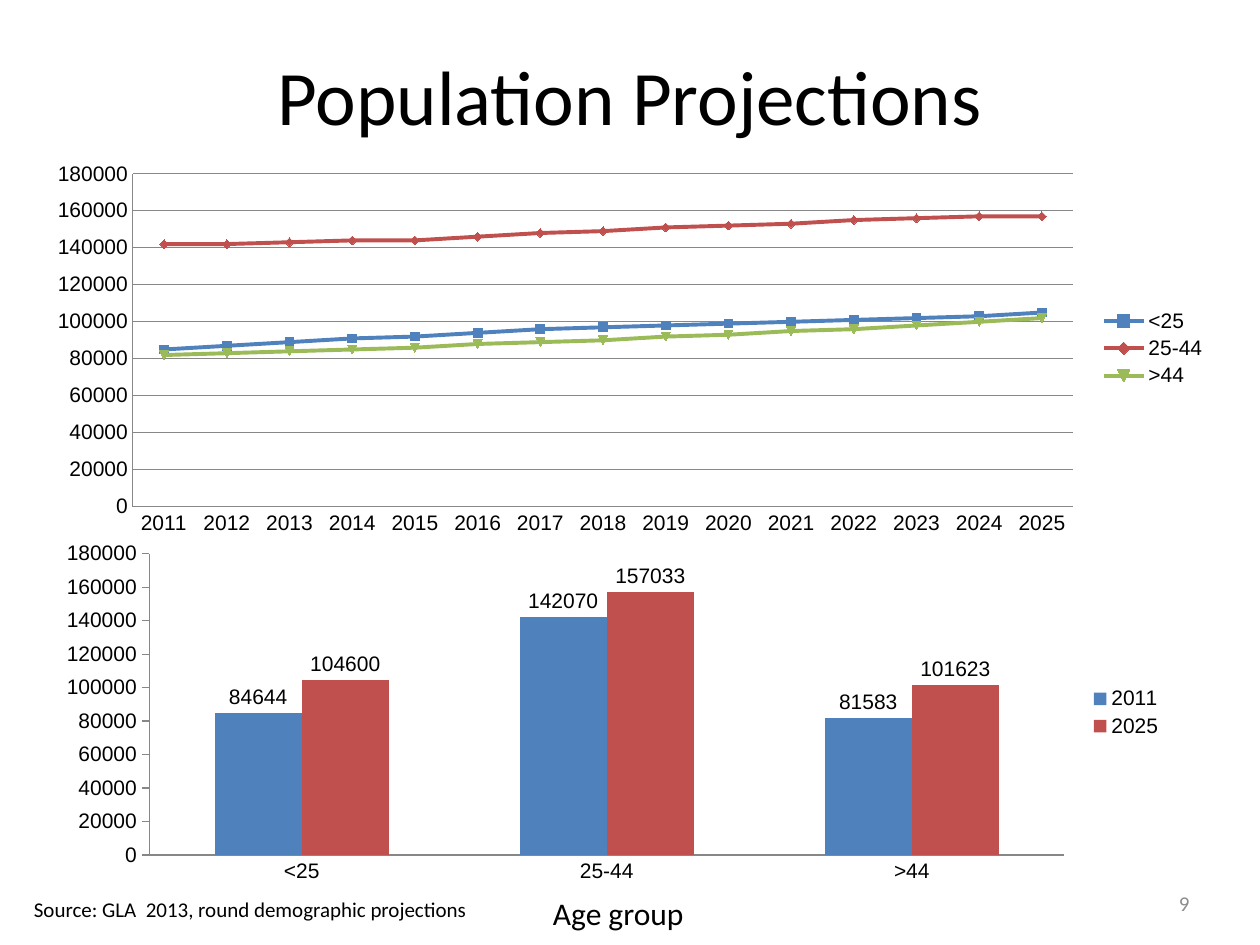
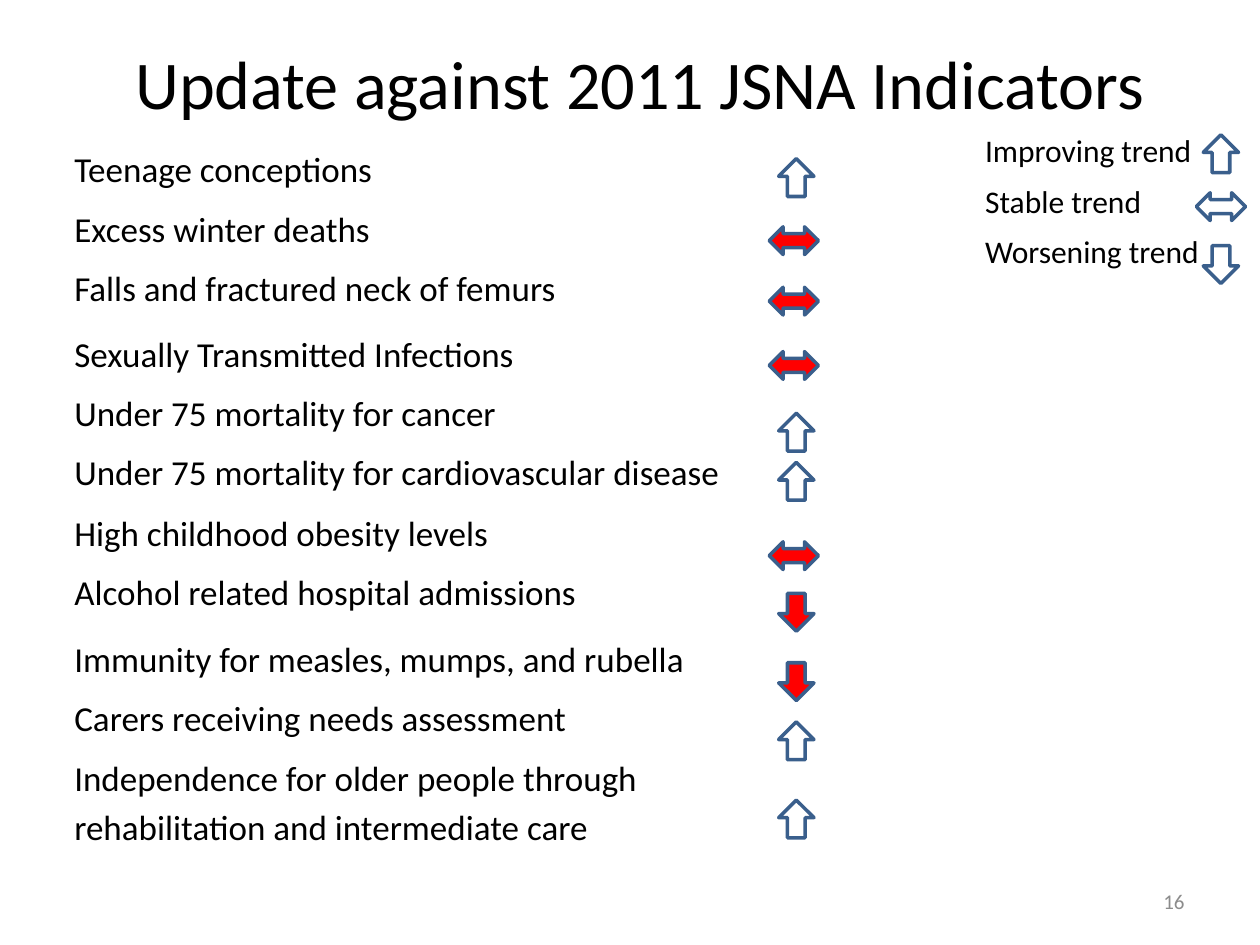
"""Build two slides: population charts and an indicator trend list."""
from typing import NamedTuple

from pptx import Presentation
from pptx.chart.data import CategoryChartData
from pptx.dml.color import RGBColor
from pptx.enum.chart import (XL_CHART_TYPE, XL_LABEL_POSITION, XL_LEGEND_POSITION,
                             XL_TICK_MARK)
from pptx.enum.shapes import MSO_SHAPE
from pptx.enum.text import MSO_ANCHOR, PP_ALIGN
from pptx.slide import Slide
from pptx.util import Inches, Pt

BLACK = RGBColor(0x00, 0x00, 0x00)
WHITE = RGBColor(0xFF, 0xFF, 0xFF)
GREY = RGBColor(0x8C, 0x8C, 0x8C)
AXIS = RGBColor(0x87, 0x87, 0x87)
BLUE = RGBColor(0x4F, 0x81, 0xBD)
BRICK = RGBColor(0xC0, 0x50, 0x4D)
GREEN = RGBColor(0x9B, 0xBB, 0x59)
RED = RGBColor(0xFF, 0x00, 0x00)
NAVY = RGBColor(0x3A, 0x5F, 0x8C)
SERIES = (BLUE, BRICK, GREEN)
FONT = "Calibri"
PLOT_FONT = "Arial"


class Box(NamedTuple):
    """Place and size in inches."""
    left: float
    top: float
    width: float
    height: float

    def lengths(self) -> tuple:
        """Return the four sides as lengths."""
        return tuple(Inches(side) for side in self)


class Label(NamedTuple):
    """A text box with one style."""
    box: Box
    lines: tuple
    size: float
    color: RGBColor = BLACK
    align: PP_ALIGN = PP_ALIGN.LEFT
    anchor: MSO_ANCHOR = MSO_ANCHOR.TOP
    wrap: bool = True
    gap: float = 0


class Graph(NamedTuple):
    """A chart with its data and axis style."""
    kind: XL_CHART_TYPE
    box: Box
    cats: tuple
    rows: dict
    tick: XL_TICK_MARK
    grid: bool


class Trend(NamedTuple):
    """An arrow form with its size, column centre and turn."""
    form: MSO_SHAPE
    width: float
    height: float
    mid: float
    turn: int = 0


class Item(NamedTuple):
    """An indicator with its row height and arrow."""
    text: str
    height: float
    trend: Trend
    top: float
    poor: bool


UP = Trend(MSO_SHAPE.UP_ARROW, 0.28, 0.3, 6.32)
FLAT = Trend(MSO_SHAPE.LEFT_RIGHT_ARROW, 0.39, 0.22, 6.3)
DOWN = UP._replace(turn=180)
KEY_MID = 9.69

AGES = ("<25", "25-44", ">44")
YEARS = tuple(str(year) for year in range(2011, 2026))
THOUSANDS = (
    (85, 87, 89, 91, 92, 94, 96, 97, 98, 99, 100, 101, 102, 103, 105),
    (142, 142, 143, 144, 144, 146, 148, 149, 151, 152, 153, 155, 156, 157, 157),
    (82, 83, 84, 85, 86, 88, 89, 90, 92, 93, 95, 96, 98, 100, 102),
)
LINES = Graph(
    XL_CHART_TYPE.LINE_MARKERS, Box(0.27, 1.23, 9.41, 3.07), YEARS,
    {age: [1000 * count for count in row] for age, row in zip(AGES, THOUSANDS)},
    XL_TICK_MARK.NONE, True)
BARS = Graph(
    XL_CHART_TYPE.COLUMN_CLUSTERED, Box(0.35, 4.25, 8.98, 2.81), AGES,
    {"2011": (84644, 142070, 81583), "2025": (104600, 157033, 101623)},
    XL_TICK_MARK.OUTSIDE, False)

ITEMS = (
    Item("Teenage conceptions", 0.48, UP, 1.26, False),
    Item("Excess winter deaths", 0.47, FLAT, 1.8, True),
    Item("Falls and fractured neck of femurs", 0.52, FLAT, 2.28, True),
    Item("Sexually Transmitted Infections", 0.47, FLAT, 2.79, True),
    Item("Under 75 mortality for cancer", 0.47, UP, 3.28, False),
    Item("Under 75 mortality for cardiovascular disease", 0.48, UP, 3.67, False),
    Item("High childhood obesity levels", 0.47, FLAT, 4.3, True),
    Item("Alcohol related hospital admissions", 0.53, DOWN, 4.71, True),
    Item("Immunity for measles, mumps, and rubella", 0.47, DOWN, 5.26, True),
    Item("Carers receiving needs assessment", 0.48, UP, 5.73, False),
    Item("Independence for older people through rehabilitation and intermediate care",
         0.86, UP, 6.35, False),
)
KEYS = ((UP, 1.07), (FLAT, 1.53), (DOWN, 1.95))


def add_label(slide: Slide, label: Label) -> None:
    """Draw a text box with one paragraph per line."""
    frame = slide.shapes.add_textbox(*label.box.lengths()).text_frame
    frame.word_wrap = label.wrap
    frame.vertical_anchor = label.anchor
    frame.text = "\n".join(label.lines)
    for index, para in enumerate(frame.paragraphs):
        para.alignment = label.align
        para.space_before = Pt(label.gap if index else 0)
        style_font(para.runs[0].font, label.size, FONT, label.color)


def style_font(font, size: float, name: str, color: RGBColor = BLACK) -> None:
    """Set the face, size and colour of a font."""
    font.name = name
    font.size = Pt(size)
    font.bold = False
    font.color.rgb = color


def add_frame(slide: Slide, title: str, box: Box, size: float,
              page: str, page_box: Box) -> None:
    """Draw the title and page number."""
    add_label(slide, Label(box, (title,), size, align=PP_ALIGN.CENTER,
                           anchor=MSO_ANCHOR.MIDDLE))
    add_label(slide, Label(page_box, (page,), 12, GREY, PP_ALIGN.RIGHT,
                           MSO_ANCHOR.MIDDLE))


def add_graph(slide: Slide, graph: Graph) -> None:
    """Draw a line or column chart."""
    data = CategoryChartData(number_format="General")
    data.categories = graph.cats
    for name, row in graph.rows.items():
        data.add_series(name, row)
    chart = slide.shapes.add_chart(graph.kind, *graph.box.lengths(), data).chart
    style_font(chart.font, 12, PLOT_FONT)
    chart.has_title = False
    chart.has_legend = True
    chart.legend.position = XL_LEGEND_POSITION.RIGHT
    chart.legend.include_in_layout = False
    style_font(chart.legend.font, 12, PLOT_FONT)
    for axis in (chart.category_axis, chart.value_axis):
        axis.major_tick_mark = XL_TICK_MARK.NONE
        axis.minor_tick_mark = XL_TICK_MARK.NONE
        axis.format.line.color.rgb = AXIS
        style_font(axis.tick_labels.font, 12, PLOT_FONT)
    scale = chart.value_axis
    scale.major_tick_mark = graph.tick
    scale.minimum_scale, scale.maximum_scale, scale.major_unit = 0, 180000, 20000
    scale.has_major_gridlines = graph.grid
    if graph.grid:
        scale.major_gridlines.format.line.color.rgb = AXIS
    plot = chart.plots[0]
    plot.vary_by_categories = False
    for series, color in zip(plot.series, SERIES):
        if graph.kind == XL_CHART_TYPE.LINE_MARKERS:
            series.smooth = False
            series.format.line.color.rgb = color
            series.format.line.width = Pt(2.25)
        else:
            series.format.fill.solid()
            series.format.fill.fore_color.rgb = color
    if graph.kind == XL_CHART_TYPE.COLUMN_CLUSTERED:
        plot.gap_width = 150
        plot.overlap = 0
        plot.has_data_labels = True
        plot.data_labels.show_value = True
        plot.data_labels.position = XL_LABEL_POSITION.OUTSIDE_END
        style_font(plot.data_labels.font, 12, PLOT_FONT)


def add_trend(slide: Slide, trend: Trend, top: float, poor: bool = False) -> None:
    """Draw a trend arrow centred on its column."""
    box = Box(trend.mid - trend.width / 2, top, trend.width, trend.height)
    arrow = slide.shapes.add_shape(trend.form, *box.lengths())
    arrow.shadow.inherit = False
    arrow.rotation = trend.turn
    arrow.line.color.rgb = NAVY
    arrow.line.width = Pt(2)
    if poor:
        arrow.fill.solid()
        arrow.fill.fore_color.rgb = RED
    else:
        arrow.fill.background()


def add_items(slide: Slide, box: Box) -> None:
    """Draw the indicator table with an arrow for each row."""
    table = slide.shapes.add_table(len(ITEMS), 1, *box.lengths()).table
    table.first_row = False
    table.horz_banding = False
    for row, item in zip(table.rows, ITEMS):
        row.height = Inches(item.height)
        cell = row.cells[0]
        cell.fill.solid()
        cell.fill.fore_color.rgb = WHITE
        cell.margin_left = cell.margin_right = Inches(0.07)
        cell.margin_top = cell.margin_bottom = Inches(0)
        cell.text_frame.text = item.text
        para = cell.text_frame.paragraphs[0]
        para.line_spacing = 1.15
        para.space_before = para.space_after = Pt(3)
        style_font(para.runs[0].font, 20, FONT)
        add_trend(slide, item.trend, item.top, item.poor)


def draw_growth(slide: Slide) -> None:
    """Draw the population slide."""
    add_frame(slide, "Population Projections", Box(0.5, 0.13, 9, 1.25), 44,
              "9", Box(7.21, 6.97, 2.33, 0.4))
    add_label(slide, Label(Box(4.29, 7.05, 3.78, 0.4), ("Age group",), 18))
    add_label(slide, Label(Box(0.17, 7.07, 3.68, 0.3),
                           ("Source: GLA  2013, round demographic projections",),
                           12, wrap=False))
    for graph in (LINES, BARS):
        add_graph(slide, graph)


def draw_trends(slide: Slide) -> None:
    """Draw the indicator slide."""
    add_frame(slide, "Update against 2011 JSNA Indicators",
              Box(0.2, 0.03, 9.76, 1.25), 39, "16", Box(7.17, 6.95, 2.33, 0.4))
    add_items(slide, Box(0.52, 1.13, 5.43, 5.7))
    for trend, top in KEYS:
        add_trend(slide, trend._replace(mid=KEY_MID), top)
    add_label(slide, Label(Box(7.72, 0.99, 1.93, 1.21),
                           ("Improving trend", "Stable trend", "Worsening trend"),
                           18, gap=7.3))


def main() -> None:
    """Build and save the deck."""
    deck = Presentation()
    deck.slide_width, deck.slide_height = Inches(10), Inches(7.5)
    for draw in (draw_growth, draw_trends):
        draw(deck.slides.add_slide(deck.slide_layouts[6]))
    deck.save("out.pptx")


if __name__ == "__main__":
    main()
